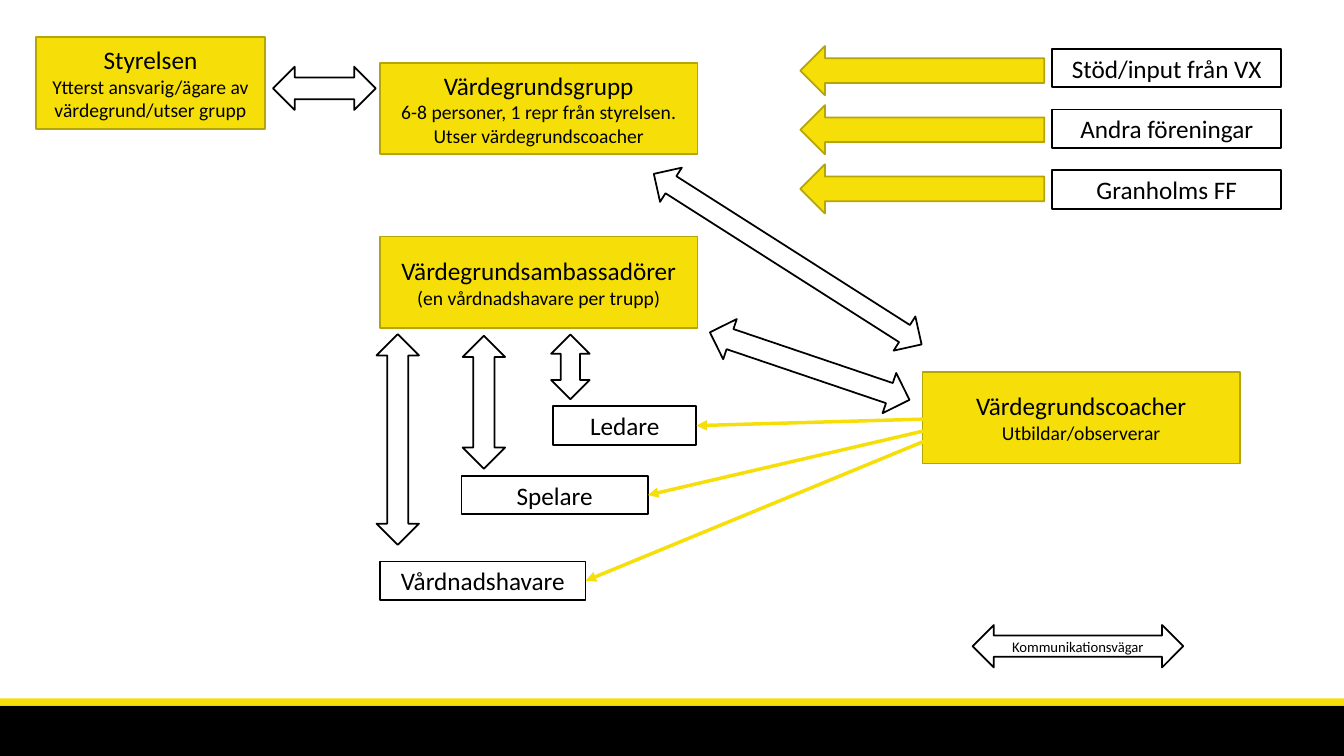
from dataclasses import dataclass

from lxml.etree import SubElement
from pptx import Presentation
from pptx.dml.color import RGBColor
from pptx.enum.shapes import MSO_CONNECTOR, MSO_SHAPE as Preset
from pptx.enum.text import MSO_ANCHOR, PP_ALIGN
from pptx.oxml.ns import qn
from pptx.util import Cm, Pt


@dataclass(frozen=True)
class Theme:
    yellow: RGBColor = RGBColor(0xF6, 0xDF, 0x08)
    olive: RGBColor = RGBColor(0xB6, 0xA5, 0x06)
    black: RGBColor = RGBColor(0, 0, 0)
    white: RGBColor = RGBColor(255, 255, 255)
    font: str = "Calibri"
    heading: float = 18
    detail: float = 14
    legend: float = 10.5
    outline: float = 1.25
    link: float = 2.5


theme = Theme()
deck = Presentation()
deck.slide_width, deck.slide_height = Cm(33.87), Cm(19.05)
slide = deck.slides.add_slide(deck.slide_layouts[6])


def add_figure(preset, bounds, fill, line, texts=()):
    figure = slide.shapes.add_shape(preset, *map(Cm, bounds))
    figure.shadow.inherit = False
    if fill is None:
        figure.fill.background()
    else:
        figure.fill.solid()
        figure.fill.fore_color.rgb = fill
    if line is None:
        figure.line.fill.background()
    else:
        figure.line.color.rgb = line
        figure.line.width = Pt(theme.outline)
    frame = figure.text_frame
    frame.word_wrap = True
    frame.vertical_anchor = MSO_ANCHOR.MIDDLE
    for index, (text, size) in enumerate(texts):
        paragraph = frame.add_paragraph() if index else frame.paragraphs[0]
        paragraph.text = text
        paragraph.alignment = PP_ALIGN.CENTER
        paragraph.font.name = theme.font
        paragraph.font.size = Pt(size)
        paragraph.font.color.rgb = theme.black
    return figure


add_figure(Preset.RECTANGLE, (0, 17.78, 33.87, 1.27), theme.black, None)
add_figure(Preset.RECTANGLE, (0, 17.6, 33.87, 0.18), theme.yellow, None)

roles = [
    (0.91, 0.94, 5.77, "Styrelsen", "Ytterst ansvarig/ägare av värdegrund/utser grupp"),
    (9.58, 1.58, 8, "Värdegrundsgrupp",
     "6-8 personer, 1 repr från styrelsen. Utser värdegrundscoacher"),
    (9.58, 5.96, 8, "Värdegrundsambassadörer", "(en vårdnadshavare per trupp)"),
    (23.25, 9.37, 8, "Värdegrundscoacher", "Utbildar/observerar"),
]
for left, top, width, title, duty in roles:
    add_figure(Preset.RECTANGLE, (left, top, width, 2.31), theme.yellow, theme.olive,
               [(title, theme.heading), (duty, theme.detail)])

audiences = [
    (13.94, 10.24, 3.61, "Ledare"),
    (11.63, 11.99, 4.7, "Spelare"),
    (9.58, 14.15, 5.18, "Vårdnadshavare"),
]
for left, top, width, audience in audiences:
    add_figure(Preset.RECTANGLE, (left, top, width, 0.97), None, theme.black,
               [(audience, theme.heading)])
    coaching = slide.shapes.add_connector(
        MSO_CONNECTOR.STRAIGHT, Cm(24.74), Cm(10.52), Cm(left + width), Cm(top + 0.97 / 2))
    coaching.line.color.rgb = theme.yellow
    coaching.line.width = Pt(theme.link)
    properties = coaching._element.spPr
    SubElement(properties.find(qn("a:ln")), qn("a:tailEnd"), type="triangle")
    SubElement(properties, qn("a:effectLst"))

channels = [
    (15.85, 6.02, 8, 1.02, 212.5, None),
    (17.75, 8.69, 5.31, 1.07, 198.7, None),
    (7.37, 10.54, 5.31, 1.07, 270, None),
    (10.52, 9.6, 3.35, 1.07, 270, None),
    (13.56, 8.76, 1.63, 0.97, 270, None),
    (6.88, 1.68, 2.59, 1.09, 180, None),
    (24.51, 15.75, 5.31, 1.07, 0, "Kommunikationsvägar"),
]
for *bounds, angle, legend in channels:
    channel = add_figure(Preset.LEFT_RIGHT_ARROW, bounds, theme.white, theme.black,
                         [(legend, theme.legend)] if legend else ())
    channel.rotation = angle

for row, supporter in enumerate(["Stöd/input från VX", "Andra föreningar", "Granholms FF"]):
    add_figure(Preset.RECTANGLE, (26.52, 1.23 + 1.53 * row, 5.77, 0.97), None, theme.black,
               [(supporter, theme.heading)])
    add_figure(Preset.LEFT_ARROW, (20.17, 1.16 + 1.49 * row, 6.15, 1.24),
               theme.yellow, theme.olive)

deck.save("out.pptx")
